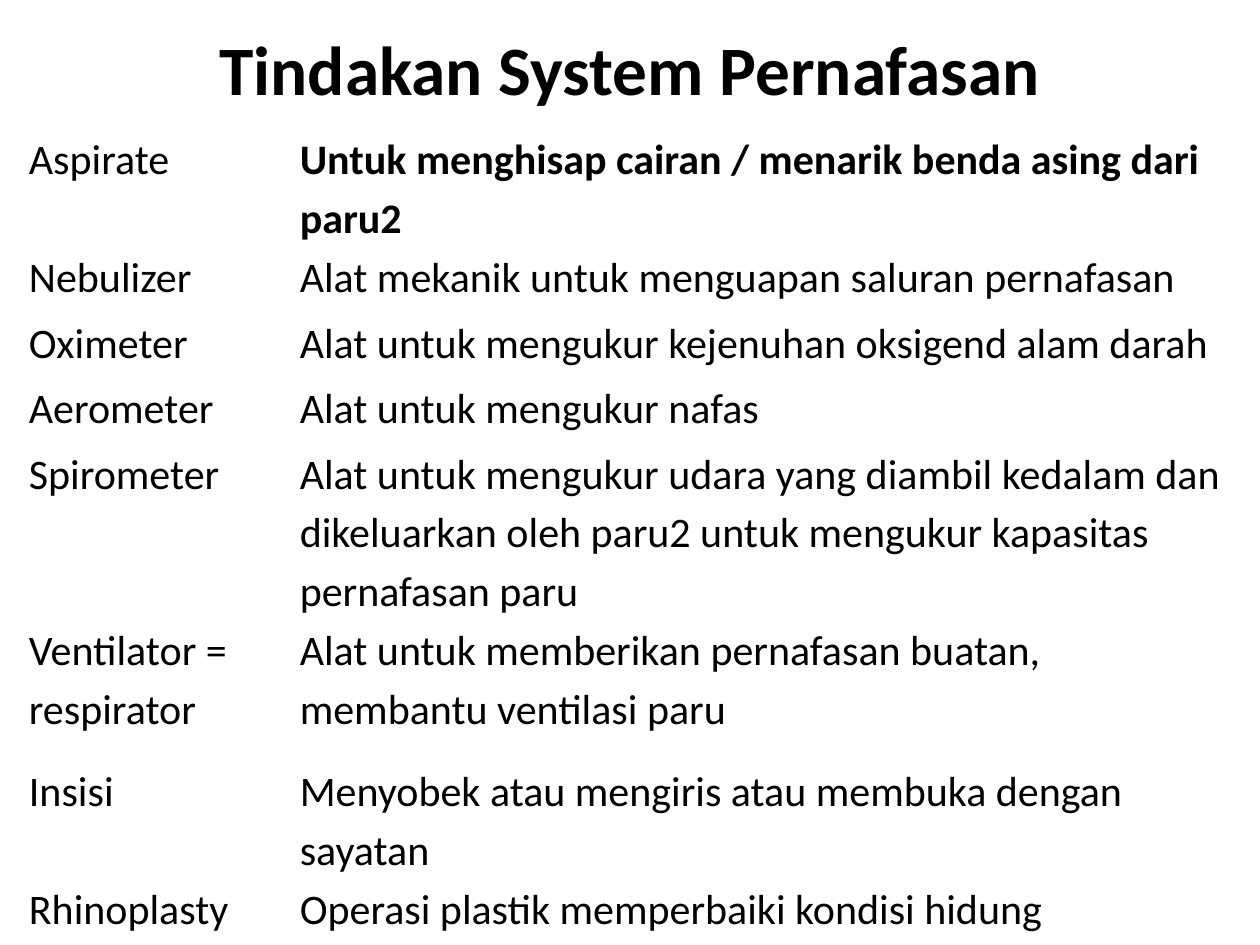
from lxml.etree import SubElement
from pptx import Presentation
from pptx.dml.color import RGBColor
from pptx.enum.text import MSO_ANCHOR as Anchor, PP_ALIGN as Align
from pptx.oxml.ns import qn
from pptx.util import Pt

PX = 9144
BLACK = RGBColor(0x00, 0x00, 0x00)
WHITE = RGBColor(0xFF, 0xFF, 0xFF)

TITLE = "Tindakan System Pernafasan"
COLUMNS = [215, 753]
TERMS = [
    (85, "Aspirate", "Untuk menghisap cairan / menarik benda asing dari paru2"),
    (52, "Nebulizer", "Alat mekanik untuk menguapan saluran pernafasan"),
    (52, "Oximeter", "Alat untuk mengukur kejenuhan oksigend alam darah"),
    (52, "Aerometer", "Alat untuk mengukur nafas"),
    (129, "Spirometer", "Alat untuk mengukur udara yang diambil kedalam dan "
                        "dikeluarkan oleh paru2 untuk mengukur kapasitas pernafasan paru"),
    (112, "Ventilator = respirator",
     "Alat untuk memberikan pernafasan buatan, membantu ventilasi paru"),
    (85, "Insisi", "Menyobek atau mengiris atau membuka dengan sayatan"),
    (52, "Rhinoplasty", "Operasi plastik memperbaiki kondisi hidung"),
]


def px(n):
    return n * PX


def write(tf, text, size=24, bold=False, align=Align.LEFT, spacing=1.0, font="Calibri"):
    p = tf.paragraphs[0]
    p.alignment = align
    p.line_spacing = spacing
    r = p.add_run()
    r.text = text
    r.font.name = font
    r.font.size = Pt(size)
    r.font.bold = bold
    r.font.color.rgb = BLACK


class Deck:
    def __init__(self, width, height):
        self.prs = Presentation()
        self.prs.slide_width = px(width)
        self.prs.slide_height = px(height)
        self.s = self.prs.slides.add_slide(self.prs.slide_layouts[5])
        self.s.background.fill.solid()
        self.s.background.fill.fore_color.rgb = WHITE

    def title(self, text, left, top, width, height):
        sp = self.s.shapes.title
        sp.left, sp.top, sp.width, sp.height = map(px, (left, top, width, height))
        tf = sp.text_frame
        tf.word_wrap = True
        tf.vertical_anchor = Anchor.MIDDLE
        write(tf, text, size=39.6, bold=True, align=Align.CENTER)

    def border(self, cell, bottom):
        tc_pr = cell._tc.get_or_add_tcPr()
        for side, width in (("L", 1), ("R", 1), ("T", 1), ("B", bottom)):
            ln = SubElement(tc_pr, qn(f"a:ln{side}"), w=str(Pt(width)))
            fill = SubElement(ln, qn("a:solidFill"))
            SubElement(fill, qn("a:srgbClr"), val=str(WHITE))

    def cell(self, cell, text, first, bold):
        cell.margin_left = cell.margin_right = px(7)
        cell.margin_top = cell.margin_bottom = 0
        self.border(cell, 3 if first else 1)
        cell.fill.background()
        write(cell.text_frame, text, bold=bold, spacing=1.15)

    def table(self, rows, columns, left, top):
        height = sum(row[0] for row in rows)
        frame = self.s.shapes.add_table(len(rows), len(columns), px(left), px(top),
                                        px(sum(columns)), px(height))
        table = frame.table
        table.first_row = table.horz_banding = False
        for column, width in zip(table.columns, columns):
            column.width = px(width)
        for i, (row_height, *texts) in enumerate(rows):
            table.rows[i].height = px(row_height)
            for j, text in enumerate(texts):
                self.cell(table.cell(i, j), text, first=i == 0, bold=i == 0 and j == 1)

    def save(self):
        self.prs.save("out.pptx")


def main():
    deck = Deck(1000, 750)
    deck.title(TITLE, 50, 30, 900, 48)
    deck.table(TERMS, COLUMNS, 16, 101)
    deck.save()


if __name__ == "__main__":
    main()
